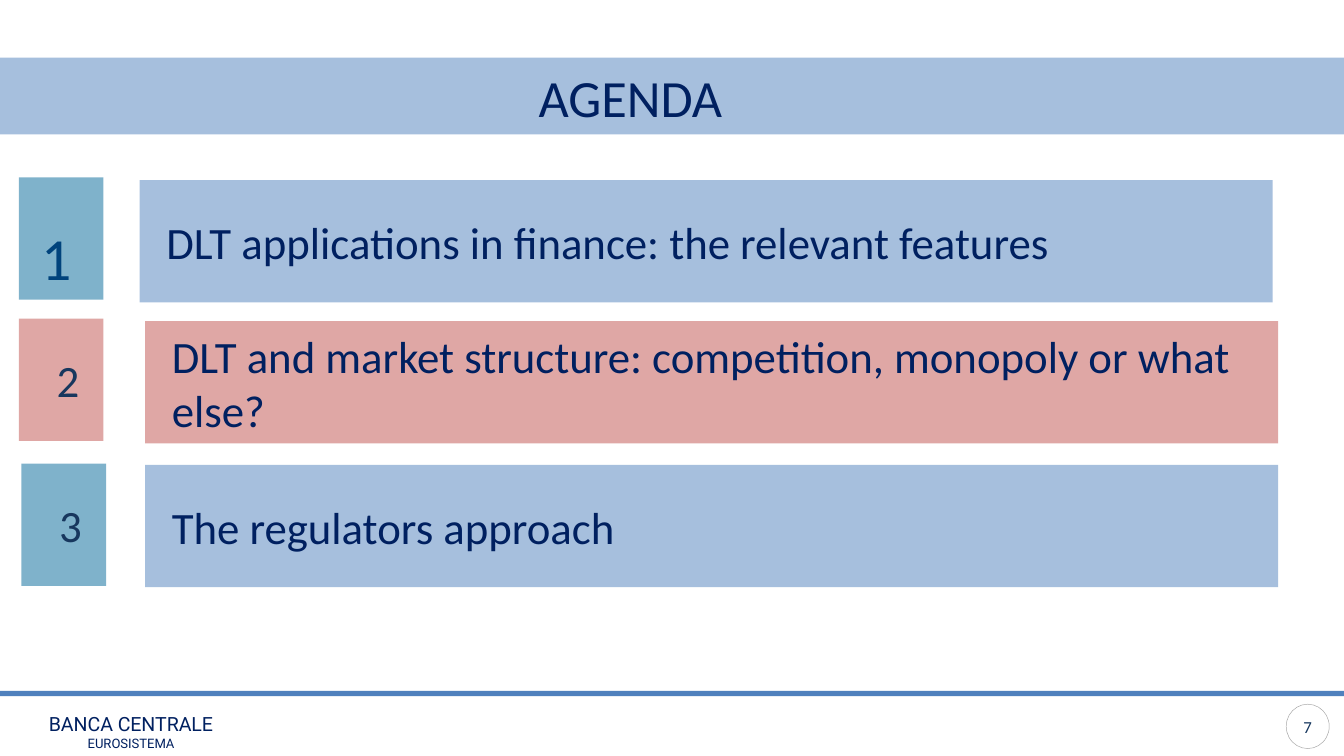
import pptx
import pptx.dml.color
import pptx.enum.shapes
import pptx.enum.text
import pptx.oxml
import pptx.oxml.ns
import pptx.util
from dataclasses import dataclass

Inches = pptx.util.Inches
ALIGN = pptx.enum.text.PP_ALIGN
ANCHOR = pptx.enum.text.MSO_ANCHOR
SHAPE = pptx.enum.shapes.MSO_SHAPE


@dataclass(frozen=True)
class Theme:
    blue: str = "4F81BD"
    teal: str = "006699"
    red: str = "C0504D"
    navy: str = "002060"
    slate: str = "17375E"
    grey: str = "A6A6A6"
    white: str = "FFFFFF"
    body: str = "Calibri"
    brand: str = "Roboto"
    title_size: float = 28
    item_size: float = 24
    first_number_size: float = 32
    page_size: float = 9
    brand_size: float = 10.5
    brand_sub_size: float = 7


theme = Theme()
rgb = pptx.dml.color.RGBColor.from_string

W = 10
prs = pptx.Presentation()
prs.slide_width, prs.slide_height = Inches(W), Inches(W * 9 / 16)
s = prs.slides.add_slide(prs.slide_layouts[5])


def add_box(x, y, w, h, color, alpha=100, kind=SHAPE.RECTANGLE):
    """Add a borderless filled shape; alpha is its opacity in percent."""
    sp = s.shapes.add_shape(kind, Inches(x), Inches(y), Inches(w), Inches(h))
    sp.shadow.inherit = False
    sp.line.fill.background()
    sp.fill.solid()
    sp.fill.fore_color.rgb = rgb(color)
    if alpha < 100:
        clr = sp.element.spPr.find(".//" + pptx.oxml.ns.qn("a:srgbClr"))
        ns = pptx.oxml.ns.nsdecls("a")
        clr.append(pptx.oxml.parse_xml(f'<a:alpha {ns} val="{alpha * 1000}"/>'))
    return sp


def write(sp, *lines, sizes, color=theme.navy, font=theme.body, align=ALIGN.LEFT,
          anchor=ANCHOR.MIDDLE, indent=0, margin=None):
    tf = sp.text_frame
    tf.word_wrap = True
    tf.auto_size = pptx.enum.text.MSO_AUTO_SIZE.NONE
    tf.vertical_anchor = anchor
    if margin is not None:
        tf.margin_left = tf.margin_right = tf.margin_top = tf.margin_bottom = margin
    for i, (line, size) in enumerate(zip(lines, sizes)):
        p = tf.paragraphs[0] if i == 0 else tf.add_paragraph()
        p.alignment = align
        if indent:
            p.level = 1
            pPr = p._p.get_or_add_pPr()
            pPr.set("marL", str(Inches(indent)))
            pPr.set("indent", "0")
        r = p.add_run()
        r.text = line
        r.font.name, r.font.size = font, pptx.util.Pt(size)
        r.font.color.rgb = rgb(color)


# Title band, page number, footer rule and institution name
add_box(0, 0.43, W, 0.57, theme.blue, alpha=50)
page = add_box(9.57, 5.24, 0.32, 0.33, theme.white, kind=SHAPE.OVAL)
page.line.color.rgb = rgb(theme.grey)
page.line.width = pptx.util.Pt(0.25)
write(page, "7", sizes=[theme.page_size], color=theme.slate, align=ALIGN.CENTER, margin=0)
add_box(0, 5.14, W, 0.04, theme.blue)
brand = s.shapes.add_textbox(Inches(0.13), Inches(5.25), Inches(1.69), Inches(0.4))
write(brand, "BANCA CENTRALE", "EUROSISTEMA", sizes=[theme.brand_size, theme.brand_sub_size],
      font=theme.brand, align=ALIGN.CENTER, anchor=ANCHOR.TOP)

# Title, brought in front of its band
title = s.shapes.title
title.left, title.top = Inches(2.9), Inches(0.37)
title.width, title.height = Inches(3.58), Inches(0.7)
write(title, "AGENDA", sizes=[theme.title_size], align=ALIGN.CENTER)
s.shapes.element.append(title.element)

# The first number lies under its translucent tile
first = s.shapes.add_textbox(Inches(0.21), Inches(1.59), Inches(0.46), Inches(0.64))
write(first, "1", sizes=[theme.first_number_size], anchor=ANCHOR.TOP)

# Agenda rows: number tile and topic bar
row_h, tile_w, bar_w = 0.91, 0.63, 8.43
agenda = [  # number, topic, tile left and top, bar left and top, tile and bar colours
    ("", "DLT applications in finance: the relevant features",
     (0.14, 1.32), (1.04, 1.34), theme.teal, theme.blue),
    ("2", "DLT and market structure: competition, monopoly or what else?",
     (0.14, 2.37), (1.08, 2.39), theme.red, theme.red),
    ("3", "The regulators approach",
     (0.16, 3.45), (1.08, 3.46), theme.teal, theme.blue),
]
for number, topic, tile_at, bar_at, tile_color, bar_color in agenda:
    tile = add_box(*tile_at, tile_w, row_h, tile_color, alpha=50)
    if number:
        write(tile, number, sizes=[theme.item_size], color=theme.slate,
              align=ALIGN.CENTER, indent=0.1)
    bar = add_box(*bar_at, bar_w, row_h, bar_color, alpha=50)
    write(bar, topic, sizes=[theme.item_size], indent=0.1)

prs.save("out.pptx")
